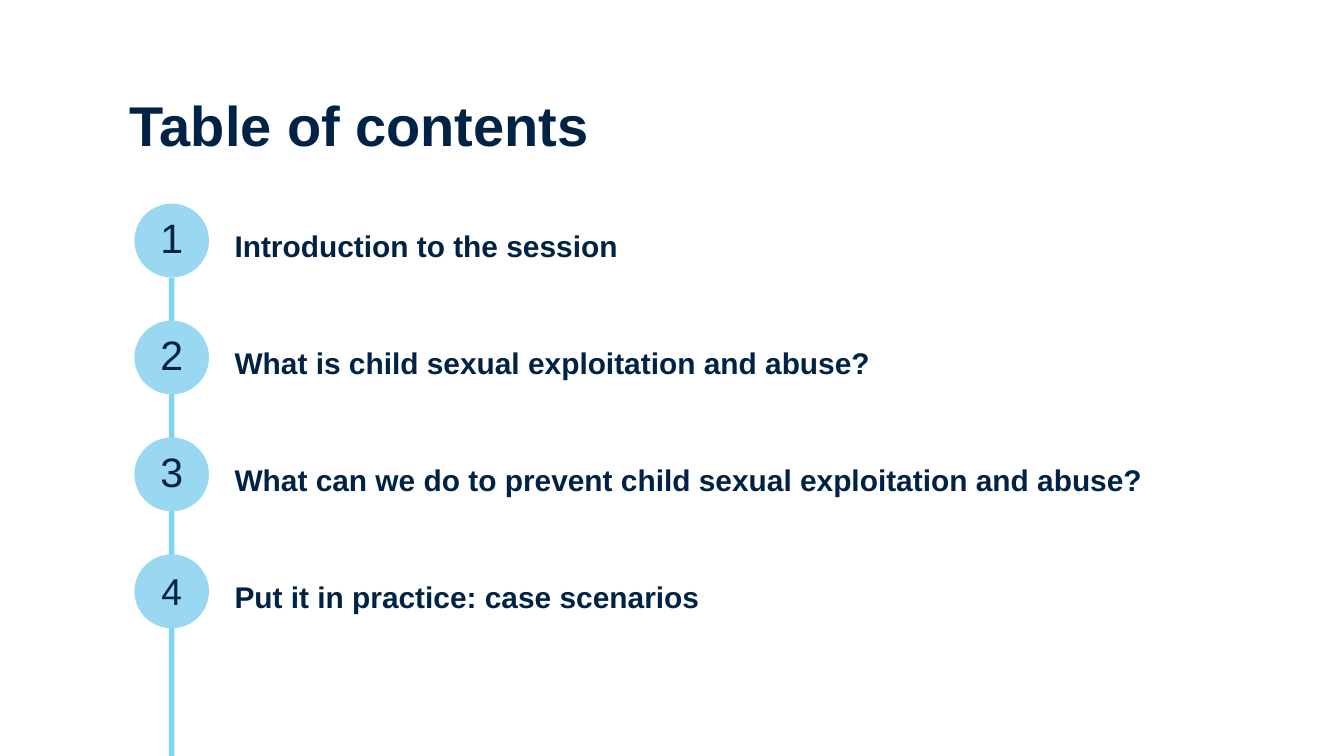
from lxml import etree
from pptx import Presentation
from pptx import util as u
from pptx.dml.color import RGBColor
from pptx.enum import shapes, text
from pptx.oxml.ns import qn

HEADING = "Table of contents"
TOPICS = [
    ("1", 44, "Introduction to the session", 11.05),
    ("2", 44, "What is child sexual exploitation and abuse?", 11.05),
    ("3", 44, "What can we do to prevent child sexual exploitation and abuse?", 13.65),
    ("4", 40, "Put it in practice: case scenarios", 11.05),
]

NAVY = RGBColor(0x00, 0x23, 0x45)
SKY = RGBColor(0x9A, 0xD7, 0xF1)
CYAN = RGBColor(0x00, 0xAD, 0xE4)
FONT = "Arial"

SLIDE_W, SLIDE_H = 20, 11.25
FIRST_ROW, ROW_PITCH, ROW_H = 3.03, 1.74, 1.1
DOT_LEFT, DOT_W = 2, 1.11
NUMBER_W, NUMBER_H, NUMBER_DROP = 0.88, 0.78, 0.27
TOPIC_LEFT = 3.43
AXIS = DOT_LEFT + DOT_W / 2
INSET = 0.06


def inches(*lengths):
    return [u.Inches(length) for length in lengths]


def style(paragraph, size, bold=False):
    font = paragraph.runs[0].font
    font.name, font.size, font.bold = FONT, u.Pt(size), bold
    font.color.rgb = NAVY


def add_label(slide, box, wording, size, leading, bold=False, align=text.PP_ALIGN.LEFT):
    frame = slide.shapes.add_textbox(*inches(*box)).text_frame
    frame.word_wrap = True
    frame.vertical_anchor = text.MSO_ANCHOR.MIDDLE
    frame.margin_left = frame.margin_right = u.Inches(INSET)
    frame.margin_top = frame.margin_bottom = u.Inches(INSET)
    frame.text = wording
    paragraph = frame.paragraphs[0]
    paragraph.alignment = align
    paragraph.line_spacing = u.Pt(leading)
    style(paragraph, size, bold)
    return paragraph.runs[0]


def add_heading(slide):
    heading = slide.shapes.title
    heading.left, heading.top, heading.width, heading.height = inches(1.83, 1.3, 8.5, 1.11)
    frame = heading.text_frame
    frame.text = HEADING
    frame.word_wrap = True
    frame.auto_size = text.MSO_AUTO_SIZE.NONE
    frame.vertical_anchor = text.MSO_ANCHOR.TOP
    frame.paragraphs[0].alignment = text.PP_ALIGN.LEFT
    style(frame.paragraphs[0], 60, True)


def add_timeline(slide):
    timeline = slide.shapes.add_connector(
        shapes.MSO_CONNECTOR.STRAIGHT, *inches(AXIS, FIRST_ROW + ROW_H, AXIS, SLIDE_H))
    timeline.line.width = u.Pt(6)
    timeline.line.color.rgb = CYAN
    properties = timeline._element.spPr
    tint = properties.find(".//" + qn("a:srgbClr"))
    etree.SubElement(tint, qn("a:alpha"), val="50000")
    etree.SubElement(properties, qn("a:effectLst"))


def add_topic(slide, row, number, number_size, topic, topic_w):
    top = FIRST_ROW + row * ROW_PITCH
    add_label(slide, (TOPIC_LEFT, top, topic_w, ROW_H), topic, 32, 49, bold=True)

    dot = slide.shapes.add_shape(
        shapes.MSO_SHAPE.OVAL, *inches(DOT_LEFT, top, DOT_W, ROW_H))
    dot.shadow.inherit = False
    dot.fill.solid()
    dot.fill.fore_color.rgb = SKY
    dot.line.fill.background()

    number_box = (AXIS - NUMBER_W / 2, top + NUMBER_DROP, NUMBER_W, NUMBER_H)
    numeral = add_label(slide, number_box, number, number_size, 30,
                        align=text.PP_ALIGN.CENTER)
    numeral._r.get_or_add_rPr().set("spc", "-60")


def main():
    deck = Presentation()
    deck.slide_width, deck.slide_height = inches(SLIDE_W, SLIDE_H)
    slide = deck.slides.add_slide(deck.slide_layouts.get_by_name("Title Only"))
    add_timeline(slide)
    add_heading(slide)
    for row, topic in enumerate(TOPICS):
        add_topic(slide, row, *topic)
    deck.save("out.pptx")


if __name__ == "__main__":
    main()
